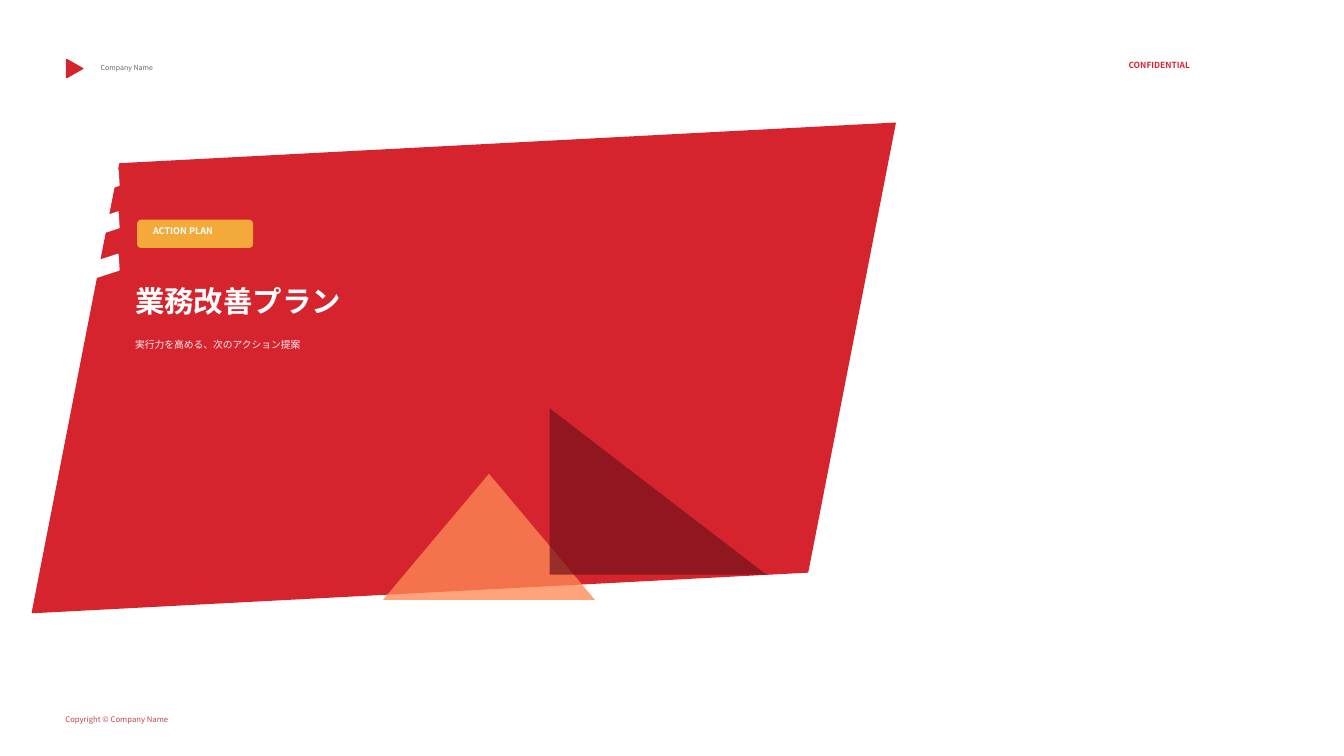
from lxml import etree
from pptx import Presentation
from pptx.dml.color import RGBColor
from pptx.enum.shapes import MSO_SHAPE as Shape
from pptx.enum.text import MSO_ANCHOR as Anchor, PP_ALIGN as Align
from pptx.oxml.ns import qn
from pptx.util import Inches, Pt

RED = "D6242F"
WHITE = "FFFFFF"


def color(hex_string):
    return RGBColor.from_string(hex_string)


class CoverSlide:
    """Holds the font and the slide, and draws its elements."""

    font_name = "Noto Sans CJK JP"

    def __init__(self, presentation):
        self.slide = presentation.slides.add_slide(presentation.slide_layouts[6])
        self.slide.background.fill.solid()
        self.slide.background.fill.fore_color.rgb = color(WHITE)

    def shape(self, kind, box, fill, outlined=False, rotation=0, opacity=None, corner=None):
        shape = self.slide.shapes.add_shape(kind, *map(Inches, box))
        shape.shadow.inherit = False
        shape.rotation = rotation
        shape.fill.solid()
        shape.fill.fore_color.rgb = color(fill)
        if outlined:
            shape.line.color.rgb = color(fill)
            shape.line.width = Pt(1)
        else:
            shape.line.fill.background()
        if corner is not None:
            shape.adjustments[0] = corner
        if opacity is not None:
            fill_color = shape._element.spPr.find(qn("a:solidFill"))[0]
            etree.SubElement(fill_color, qn("a:alpha"), val=str(opacity * 1000))

    def text(self, text, box, size, fill, bold=False, align=Align.LEFT, inset=True):
        frame = self.slide.shapes.add_textbox(*map(Inches, box)).text_frame
        frame.word_wrap = True
        frame.vertical_anchor = Anchor.MIDDLE
        if not inset:
            frame.margin_left = frame.margin_right = 0
            frame.margin_top = frame.margin_bottom = 0
        paragraph = frame.paragraphs[0]
        paragraph.alignment = align
        run = paragraph.add_run()
        run.text = text
        run.font.size = Pt(size)
        run.font.bold = bold
        run.font.color.rgb = color(fill)
        run.font.name = self.font_name
        # East Asian characters need their own typeface entry
        etree.SubElement(run._r.rPr, qn("a:ea"), typeface=self.font_name)


def main():
    presentation = Presentation()
    presentation.slide_width = Inches(13.33)
    presentation.slide_height = Inches(7.5)
    cover = CoverSlide(presentation)

    # Slanted red panel with white notches at its left edge
    cover.shape(Shape.PARALLELOGRAM, (0.2, 1.45, 8.8, 4.4), RED, outlined=True, rotation=357)
    for index in range(3):
        notch_box = (0.12, 1.85 + 0.42 * index, 1.1, 0.15)
        cover.shape(Shape.PARALLELOGRAM, notch_box, WHITE, outlined=True, rotation=342)

    # Translucent triangles
    cover.shape(Shape.ISOSCELES_TRIANGLE, (3.8, 4.7, 2.1, 1.25), "FF8A55", opacity=78)
    cover.shape(Shape.RIGHT_TRIANGLE, (5.45, 4.05, 2.15, 1.65), "73121A", opacity=70)

    # Company mark and name
    cover.shape(Shape.ISOSCELES_TRIANGLE, (0.65, 0.6, 0.18, 0.16), RED, outlined=True, rotation=90)
    cover.text("Company Name", (0.9, 0.58, 1.4, 0.18), 5, "666666")

    # Label
    cover.shape(Shape.ROUNDED_RECTANGLE, (1.36, 2.18, 1.15, 0.28), "F4AA3A", corner=0.14)
    cover.text("ACTION PLAN", (1.42, 2.23, 1.03, 0.12), 6.5, WHITE, bold=True)

    # Title and subtitle
    cover.text("業務改善プラン", (1.34, 2.76, 5.55, 0.45), 21, WHITE, bold=True, inset=False)
    cover.text("実行力を高める、次のアクション提案", (1.34, 3.31, 5.55, 0.22), 7, "FFEFF0", inset=False)

    # Footer and confidentiality note
    cover.text("Copyright © Company Name", (0.55, 7.05, 2.6, 0.18), 5.5, "B6464B")
    cover.text("CONFIDENTIAL", (10.55, 0.55, 1.35, 0.2), 6, RED, bold=True, align=Align.RIGHT)

    presentation.save("out.pptx")


if __name__ == "__main__":
    main()
